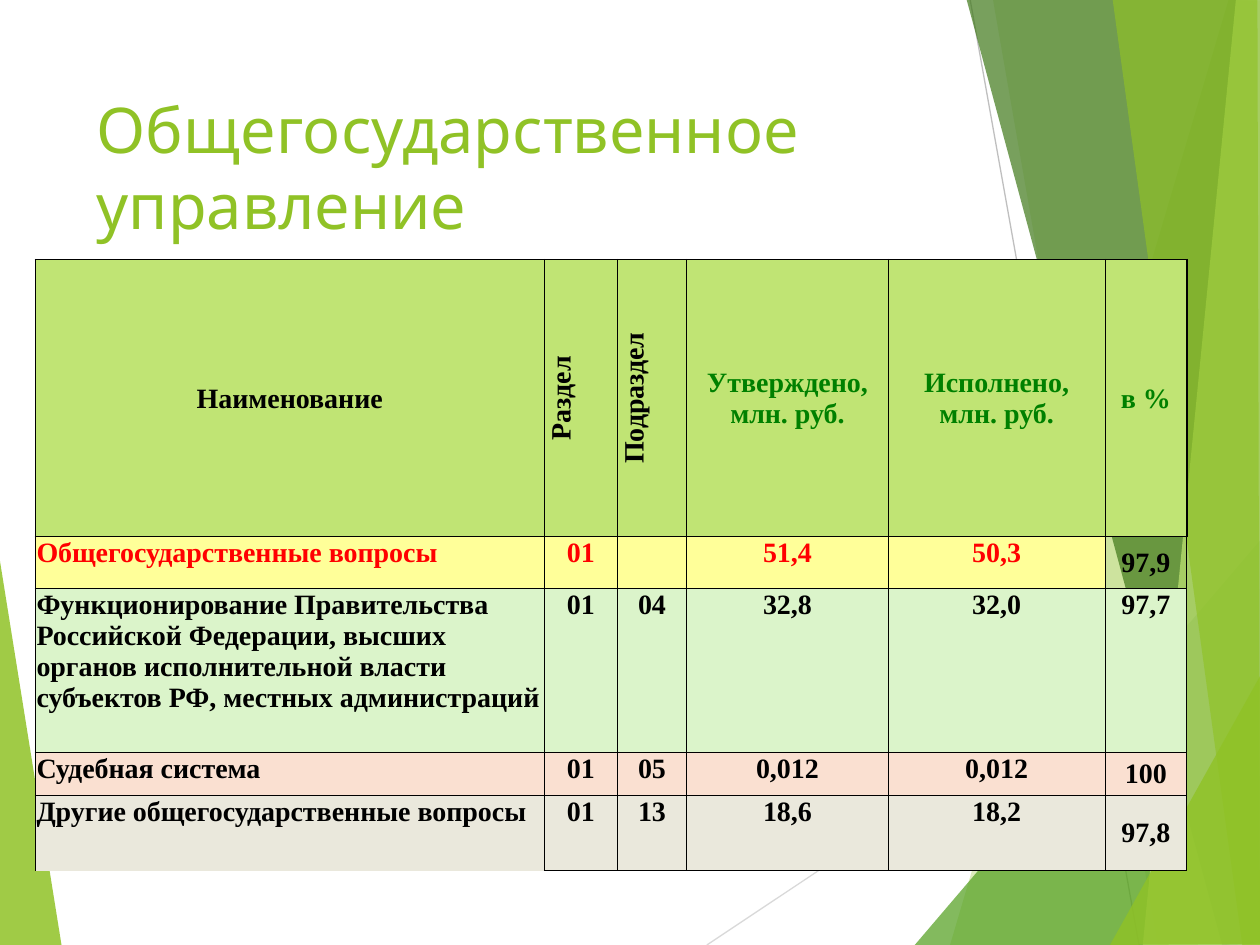
import pptx
import pptx.dml.color
import pptx.enum.shapes
import pptx.enum.text
import pptx.oxml.ns
import pptx.util
from lxml import etree

Inches, Pt = pptx.util.Inches, pptx.util.Pt
RGBColor = pptx.dml.color.RGBColor
PP_ALIGN, ANCHOR = pptx.enum.text.PP_ALIGN, pptx.enum.text.MSO_ANCHOR
qn = pptx.oxml.ns.qn

LEAF = RGBColor(0x90, 0xC2, 0x26)
GRASS = RGBColor(0x54, 0xA0, 0x21)
FOREST = RGBColor(0x3F, 0x78, 0x19)
LIME = RGBColor(0xC0, 0xE4, 0x74)
SILVER = RGBColor(0xD9, 0xD9, 0xD9)
GRAY = RGBColor(0xBF, 0xBF, 0xBF)
BLACK = RGBColor(0, 0, 0)
GREEN = RGBColor(0, 0x80, 0)
RED = RGBColor(0xFF, 0, 0)
YELLOW = RGBColor(0xFF, 0xFF, 0x99)
MINT = RGBColor(0xDB, 0xF4, 0xCA)
PEACH = RGBColor(0xFA, 0xE0, 0xD1)
STONE = RGBColor(0xEA, 0xE8, 0xDC)

TITLE = "Общегосударственное управление"

# Background facets: colour, opacity in percent, corners
LEFT_FACET = (LEAF, 85, [(-0.01, 4.39), (0.49, 7.51), (-0.01, 7.5)])
RIGHT_FACETS = [
    (LEAF, 30, [(9.75, 0), (7.54, 7.5), (10.02, 7.51), (10.01, 0.01)]),
    (LEAF, 20, [(7.88, -0.01), (9.19, 7.5), (10.01, 7.5), (10.01, -0.01)]),
    (GRASS, 72, [(7.26, 7.5), (10, 4.29), (10.01, 7.5)]),
    (FOREST, 70, [(7.67, -0.01), (9.7, 7.5), (10.01, 7.49), (10.01, -0.01)]),
    (LIME, 70, [(9.81, -0.01), (9.07, 7.5), (10.01, 7.5), (10, -0.01)]),
    (LEAF, 65, [(8.83, -0.01), (9.86, 7.5), (10, 7.5), (9.98, -0.01)]),
    (LEAF, 80, [(8.81, 7.5), (10.01, 5.35), (10.01, 7.49)]),
]
RAYS = [(SILVER, (5.61, 7.5), (10.01, 4.57)), (GRAY, (7.7, 0), (9.04, 7.5))]

# Table: row height, fill, text colour, texts
COLUMN_WIDTHS = [4.04, 0.58, 0.55, 1.6, 1.72, 0.65]
ROWS = [
    (2.2, LIME, BLACK, ["Наименование", "Раздел", "Подраздел", "Утверждено,\nмлн. руб.",
                        "Исполнено,\nмлн. руб.", "в %"]),
    (0.41, YELLOW, RED, ["Общегосударственные вопросы", "01", "", "51,4", "50,3", "97,9"]),
    (1.3, MINT, BLACK, ["Функционирование Правительства Российской Федерации, высших органов "
                        "исполнительной власти субъектов РФ, местных администраций",
                        "01", "04", "32,8", "32,0", "97,7"]),
    (0.34, PEACH, BLACK, ["Судебная система", "01", "05", "0,012", "0,012", "100"]),
    (0.6, STONE, BLACK, ["Другие общегосударственные вопросы", "01", "13", "18,6", "18,2", "97,8"]),
]
HEADER, TOTAL, FUNCTIONS, LAST_ROW = 0, 1, 2, len(ROWS) - 1
NAME, PERCENT = 0, len(COLUMN_WIDTHS) - 1
VERTICAL, MONEY = (1, 2), (3, 4, 5)


def add_facet(page, color, opacity, corners):
    points = [(Inches(x), Inches(y)) for x, y in corners]
    builder = page.shapes.build_freeform(*points[0], scale=1.0)
    builder.add_line_segments(points[1:], close=True)
    facet = builder.convert_to_shape()
    facet.shadow.inherit = False
    facet.line.fill.background()
    facet.fill.solid()
    facet.fill.fore_color.rgb = color
    tint = facet.fill._xPr.find(qn("a:solidFill"))[0]
    etree.SubElement(tint, qn("a:alpha"), val=str(opacity * 1000))


def add_ray(page, color, start, end):
    ray = page.shapes.add_connector(pptx.enum.shapes.MSO_CONNECTOR.STRAIGHT,
                                    *map(Inches, start + end))
    ray.line.color.rgb = color
    ray.line.width = Pt(0.75)
    etree.SubElement(ray._element.spPr, qn("a:effectLst"))


def set_borders(cell, widths):
    properties = cell._tc.get_or_add_tcPr()
    for side, width in widths.items():
        line = etree.SubElement(properties, qn("a:ln" + side), w=str(Pt(width)))
        if width:
            fill = etree.SubElement(line, qn("a:solidFill"))
            etree.SubElement(fill, qn("a:srgbClr"), val=str(BLACK))
        else:
            etree.SubElement(line, qn("a:noFill"))


def style_cell(cell, row, column, fill, color, text):
    # Heavier lines frame the header and the left edge
    set_borders(cell, {
        "L": 1 if column == NAME else 0.5,
        "R": 1 if row == HEADER and column in (NAME, PERCENT) else 0.5,
        "T": 1 if row in (HEADER, TOTAL) else 0.5,
        "B": 1 if row == HEADER else 0 if (row, column) == (LAST_ROW, NAME) else 0.5,
    })
    if (row, column) == (TOTAL, PERCENT):
        cell.fill.background()
        color = BLACK
    else:
        cell.fill.solid()
        cell.fill.fore_color.rgb = fill
    if row == HEADER and column in MONEY:
        color = GREEN
    if row == HEADER and column in VERTICAL:
        cell._tc.get_or_add_tcPr().set("vert", "vert270")

    cell.margin_left = cell.margin_right = cell.margin_top = Inches(0.01)
    cell.margin_bottom = 0
    centred = row == HEADER or (column == PERCENT and row != FUNCTIONS)
    cell.vertical_anchor = ANCHOR.MIDDLE if centred else ANCHOR.TOP
    cell.text_frame.text = text
    for paragraph in cell.text_frame.paragraphs:
        left = column == NAME and row != HEADER
        paragraph.alignment = PP_ALIGN.LEFT if left else PP_ALIGN.CENTER
        paragraph.font.size = Pt(16)
        for span in paragraph.runs:
            span.font.name = "Times New Roman"
            span.font.size = Pt(16)
            span.font.bold = True
            span.font.color.rgb = color


def add_budget_table(page):
    frame = page.shapes.add_table(len(ROWS), len(COLUMN_WIDTHS), Inches(0.28), Inches(2.06),
                                  Inches(sum(COLUMN_WIDTHS)), Inches(sum(r[0] for r in ROWS)))
    table = frame.table
    table.first_row = table.horz_banding = False
    for column, width in enumerate(COLUMN_WIDTHS):
        table.columns[column].width = Inches(width)
    for row, (height, fill, color, texts) in enumerate(ROWS):
        table.rows[row].height = Inches(height)
        for column, text in enumerate(texts):
            style_cell(table.cell(row, column), row, column, fill, color, text)


def add_title(page):
    box = page.shapes.add_textbox(Inches(0.67), Inches(0.67), Inches(6.94), Inches(1.44))
    box.text_frame.word_wrap = True
    box.text_frame.text = TITLE
    font = box.text_frame.paragraphs[0].runs[0].font
    font.name, font.size = "Karla", Pt(36)
    font.color.rgb = LEAF


def main():
    deck = pptx.Presentation()
    deck.slide_width, deck.slide_height = Inches(10), Inches(7.5)
    page = deck.slides.add_slide(deck.slide_layouts[6])
    add_facet(page, *LEFT_FACET)
    for ray in RAYS:
        add_ray(page, *ray)
    for facet in RIGHT_FACETS:
        add_facet(page, *facet)
    add_title(page)
    add_budget_table(page)
    deck.save("out.pptx")


if __name__ == "__main__":
    main()
